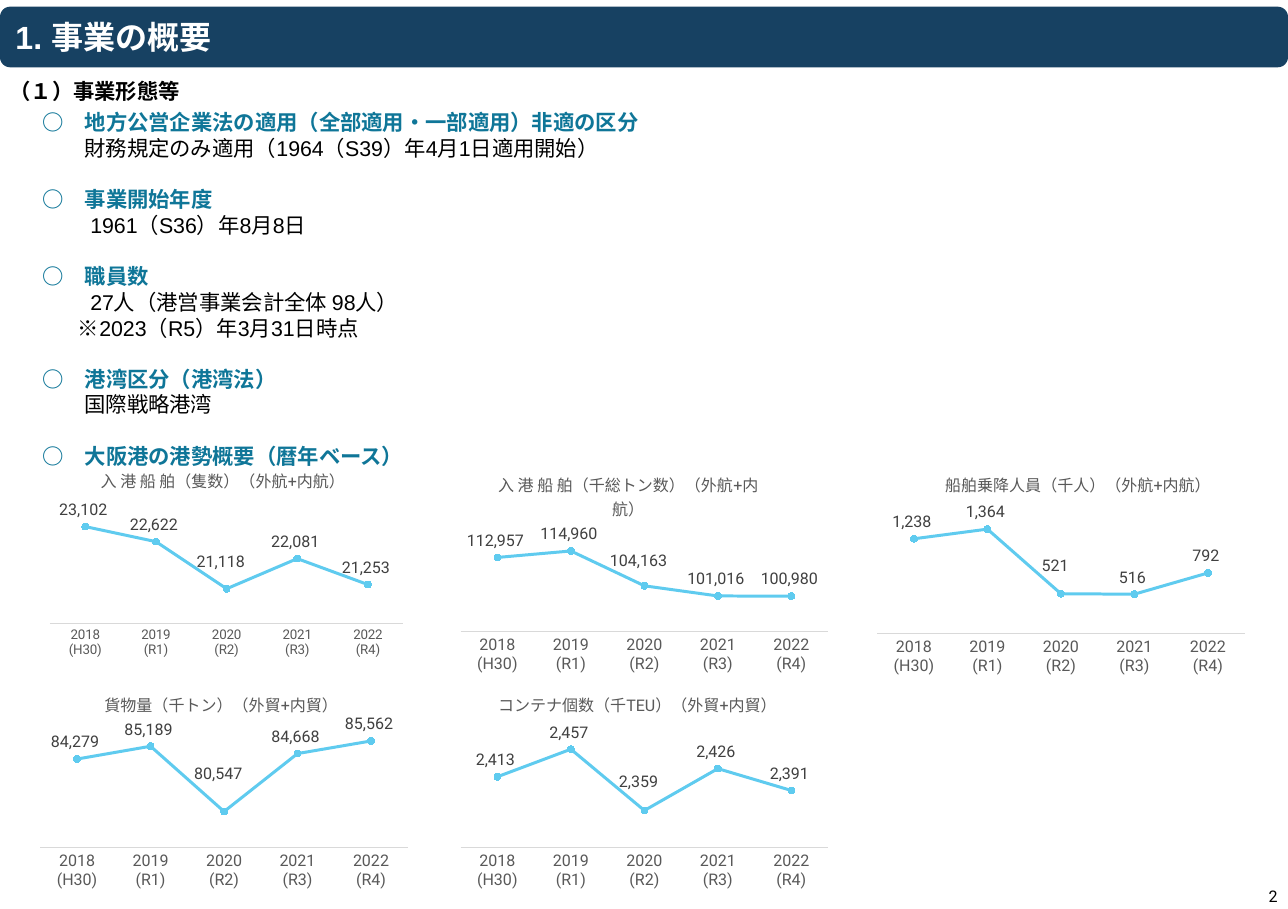
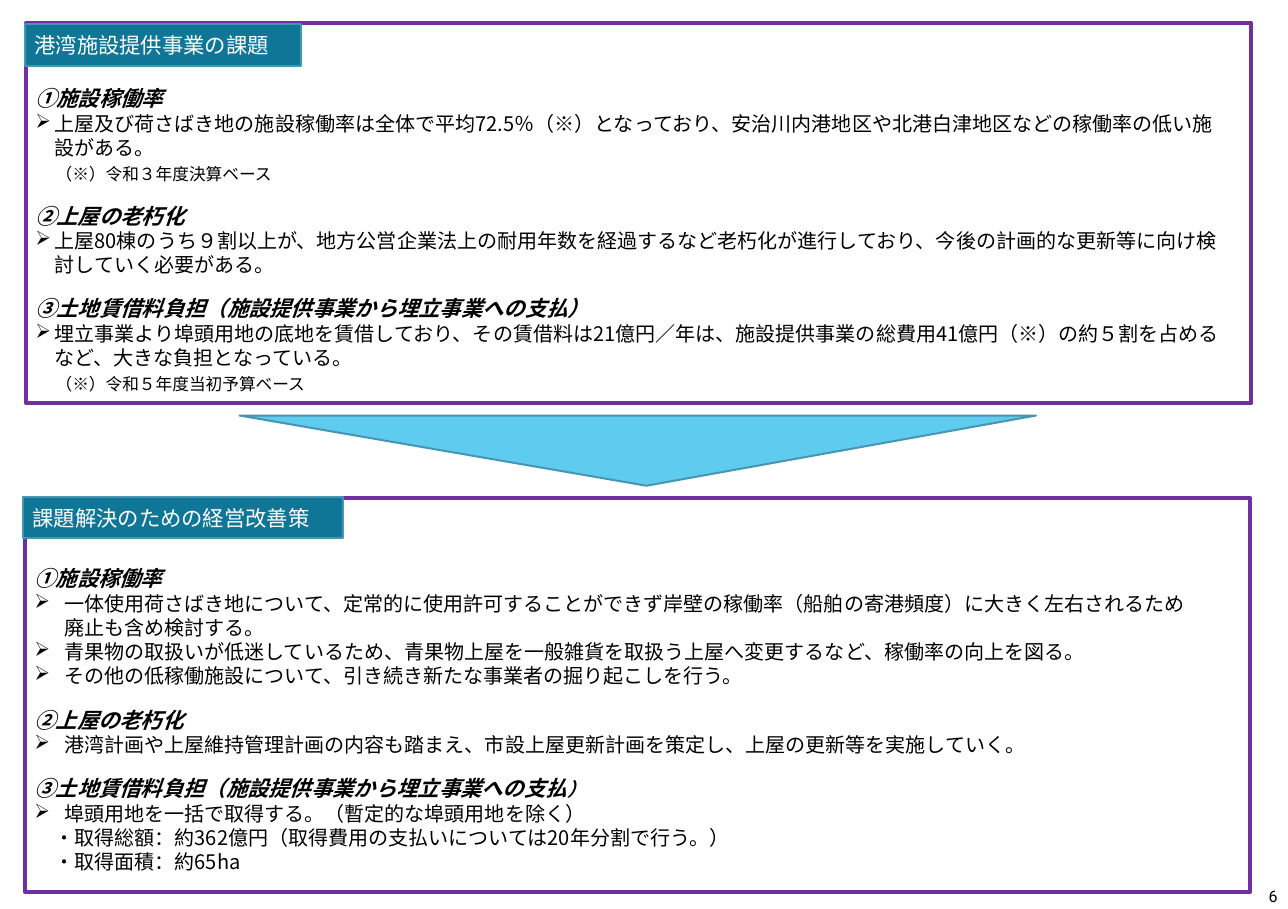
from lxml import etree
from pptx import Presentation
from pptx.chart.data import CategoryChartData
from pptx.dml.color import RGBColor
from pptx.enum.chart import XL_CHART_TYPE, XL_LABEL_POSITION, XL_MARKER_STYLE, XL_TICK_MARK
from pptx.enum.shapes import MSO_SHAPE
from pptx.enum.text import MSO_ANCHOR, PP_ALIGN
from pptx.oxml.ns import qn
from pptx.util import Inches, Pt

LINE_MARKERS = XL_CHART_TYPE.LINE_MARKERS
ABOVE = XL_LABEL_POSITION.ABOVE
CIRCLE = XL_MARKER_STYLE.CIRCLE
NO_TICK = XL_TICK_MARK.NONE
RECTANGLE, ROUNDED = MSO_SHAPE.RECTANGLE, MSO_SHAPE.ROUNDED_RECTANGLE
TOP, MIDDLE = MSO_ANCHOR.TOP, MSO_ANCHOR.MIDDLE
LEFT, RIGHT = PP_ALIGN.LEFT, PP_ALIGN.RIGHT

COLORS = {name: RGBColor.from_string(value) for name, value in {
    "navy": "174162", "teal": "0F7698", "teal_line": "4696B1", "sky": "5FCBEF",
    "purple": "7030A0", "black": "000000", "white": "FFFFFF",
    "label": "404040", "gray": "595959", "axis": "D9D9D9"}.items()}
CJK = "Noto Sans CJK JP"
NUMBER_FORMAT = r"#,##0_);[Red]\(#,##0\)"


def write(frame, text, size=16, name="Roboto", color="black", bold=False, italic=False,
          align=LEFT, before=0, indent=0, hanging=0, bullet=None):
    """Fill the first paragraph of the frame, or add one after the last."""
    para = frame.paragraphs[0] if not frame.text else frame.add_paragraph()
    para.text = text
    para.alignment = align
    para.line_spacing = Pt(size * 1.2)
    para.space_before = Pt(before)
    font = para.font
    font.name, font.size, font.bold, font.italic = name, Pt(size), bold, italic
    font.color.rgb = COLORS[color]
    properties = para._p.get_or_add_pPr()
    properties.set("marL", str(Inches(indent)))
    properties.set("indent", str(-Inches(hanging)))
    defaults = properties.find(qn("a:defRPr"))
    defaults.find(qn("a:latin")).addnext(etree.Element(qn("a:ea"), typeface=CJK))
    if bullet:
        defaults.addprevious(etree.Element(qn("a:buChar"), char=bullet))
    return para


def add_box(page, place, kind=None, fill=None, line=None, width=0, anchor=TOP):
    """Add a text box, or a preset shape when a kind is given."""
    place = [Inches(length) for length in place]
    if kind is None:
        box = page.shapes.add_textbox(*place)
    else:
        box = page.shapes.add_shape(kind, *place)
        box.shadow.inherit = False
        if fill:
            box.fill.solid()
            box.fill.fore_color.rgb = COLORS[fill]
        else:
            box.fill.background()
        if line:
            box.line.color.rgb = COLORS[line]
            box.line.width = Pt(width)
        else:
            box.line.fill.background()
    box.text_frame.word_wrap = True
    box.text_frame.vertical_anchor = anchor
    return box


deck = Presentation()
deck.slide_width, deck.slide_height = Inches(13.39), Inches(9.45)

# Pages with their numbers
pages = []
for number in ("2", "6"):
    page = deck.slides.add_slide(deck.slide_layouts[6])
    number_box = add_box(page, (12.63, 9.18, 0.75, 0.27), anchor=MIDDLE)
    write(number_box.text_frame, number, 12, align=RIGHT)
    pages.append(page)
overview, issues = pages

# Overview: title band and section heading
band = add_box(overview, (0, 0.07, 13.39, 0.63), ROUNDED, fill="navy", anchor=MIDDLE)
band.text_frame.margin_left = Inches(0.13)
write(band.text_frame, "1. 事業の概要", 24, "Arial", "white", bold=True)
section = add_box(overview, (0, 0.76, 2.29, 0.37))
write(section.text_frame, "（１）事業形態等", bold=True)

# Overview: headings, each with its indented lines
facts = [
    ("○　地方公営企業法の適用（全部適用・一部適用）非適の区分",
     [("財務規定のみ適用（1964（S39）年4月1日適用開始）", 0.44)]),
    ("○　事業開始年度", [("1961（S36）年8月8日", 0.5)]),
    ("○　職員数", [("27人（港営事業会計全体 98人）", 0.5),
                ("　※2023（R5）年3月31日時点", 0.15)]),
    ("○　港湾区分（港湾法）", [("国際戦略港湾", 0.44)]),
    ("○　大阪港の港勢概要（暦年ベース）", []),
]
facts_frame = add_box(overview, (0.34, 1.09, 12.09, 3.87)).text_frame
for index, (heading, lines) in enumerate(facts):
    write(facts_frame, heading, color="teal", bold=True, before=19.2 if index else 0)
    for text, indent in lines:
        write(facts_frame, text, name="Arial", indent=indent)

# Overview: line charts
years = ["2018\n(H30)", "2019\n(R1)", "2020\n(R2)", "2021\n(R3)", "2022\n(R4)"]
# title, left, top, height, category size, values, axis range,
# plot area (x, y, w, h), title corner, shift of the 2020 label
charts = [
    ("入 港 船 舶（隻数）（外航+内航）", 0.38, 4.8, 2.13, 10,
     (23102, 22622, 21118, 22081, 21253), (20000, 23500),
     (0.035, 0.256, 0.923, 0.536), (0.16, 0.01), (-0.01, -0.05)),
    ("入 港 船 舶（千総トン数）（外航+内\n航）", 4.71, 4.82, 2.24, 12,
     (112957, 114960, 104163, 101016, 100980), (90000, 120000),
     (0.02, 0.33, 0.96, 0.45), (0.11, 0.02), (-0.01, -0.04)),
    ("貨物量（千トン）（外貿+内貿）", 0.34, 7.15, 2.13, 12,
     (84279, 85189, 80547, 84668, 85562), (78000, 86000),
     (0.02, 0.23, 0.96, 0.55), (0.18, 0), (-0.01, -0.1)),
    ("コンテナ個数（千TEU）（外貿+内貿）", 4.71, 7.15, 2.13, 12,
     (2413, 2457, 2359, 2426, 2391), (2300, 2480),
     (0.02, 0.23, 0.96, 0.55), (0.11, 0), (-0.01, -0.06)),
    ("船舶乗降人員（千人）（外航+内航）", 9.04, 4.82, 2.24, 12,
     (1238, 1364, 521, 516, 792), (0, 1600),
     (0.02, 0.22, 0.96, 0.57), (0.19, 0.02), (-0.01, -0.05)),
]
for (title, left, top, height, category_size, values, limits,
     plot_area, title_corner, label_shift) in charts:
    data = CategoryChartData(number_format=NUMBER_FORMAT)
    data.categories = years
    data.add_series("Series 1", values)
    chart = overview.shapes.add_chart(LINE_MARKERS, Inches(left), Inches(top),
                                      Inches(3.98), Inches(height), data).chart
    chart.has_legend = False
    chart.font.name, chart.font.size = "Roboto", Pt(10)
    chart.font.color.rgb = COLORS["black"]

    chart.has_title = True
    title_frame = chart.chart_title.text_frame
    title_frame.text = title
    for para in title_frame.paragraphs:
        para.font.name, para.font.size, para.font.bold = "Roboto", Pt(12), False
        para.font.color.rgb = COLORS["gray"]

    category_axis, value_axis = chart.category_axis, chart.value_axis
    category_axis.major_tick_mark = NO_TICK
    category_axis.format.line.color.rgb = COLORS["axis"]
    category_axis.format.line.width = Pt(0.75)
    category_axis.tick_labels.font.name = "Roboto"
    category_axis.tick_labels.font.size = Pt(category_size)
    category_axis.tick_labels.font.color.rgb = COLORS["gray"]
    value_axis.minimum_scale, value_axis.maximum_scale = limits
    value_axis.has_major_gridlines = False
    value_axis.visible = False

    plot = chart.plots[0]
    plot.vary_by_categories = False
    series = plot.series[0]
    series.smooth = False
    series.format.line.color.rgb = COLORS["sky"]
    series.format.line.width = Pt(2.25)
    series.marker.style, series.marker.size = CIRCLE, 5
    series.marker.format.fill.solid()
    series.marker.format.fill.fore_color.rgb = COLORS["sky"]
    series.marker.format.line.color.rgb = COLORS["sky"]
    labels = series.data_labels
    labels.show_value = True
    labels.number_format, labels.number_format_is_linked = NUMBER_FORMAT, False
    for label in (labels, series.points[2].data_label):
        label.position = ABOVE
        label.font.name, label.font.size = "Roboto", Pt(12)
        label.font.color.rgb = COLORS["label"]

    # No leader lines; manual positions of plot area, title and 2020 label
    space = chart._chartSpace
    for leader_lines in space.iter(qn("c:showLeaderLines")):
        leader_lines.set("val", "0")
    for tag, index, mode, numbers in (("c:plotArea", 0, "edge", plot_area),
                                      ("c:title", 1, "edge", title_corner),
                                      ("c:dLbl", 1, "factor", label_shift)):
        parent = next(space.iter(qn(tag)))
        for old_layout in parent.findall(qn("c:layout")):
            parent.remove(old_layout)
        layout = etree.Element(qn("c:layout"))
        manual = etree.SubElement(layout, qn("c:manualLayout"))
        settings = [("layoutTarget", "inner")] if tag == "c:plotArea" else []
        settings += [("xMode", mode), ("yMode", mode), *zip("xywh", numbers)]
        for key, value in settings:
            etree.SubElement(manual, qn(f"c:{key}"), val=str(value))
        parent.insert(index, layout)

# Issues: two framed panels with tabs
STYLES = {
    "heading": dict(size=16, bold=True, italic=True),
    "bullet": dict(size=15, bullet="➢"),
    "detail": dict(size=15, indent=0.21),
    "note": dict(size=12.5, indent=0.21, before=3),
}
panels = [
    ("港湾施設提供事業の課題", (0.27, 0.24, 12.74, 3.95), (0.26, 0.25, 2.87, 0.44), 0.65, 0.2, [
        ("heading", "①施設稼働率"),
        ("bullet", "上屋及び荷さばき地の施設稼働率は全体で平均72.5％（※）となっており、"
                   "安治川内港地区や北港白津地区などの稼働率の低い施\v設がある。"),
        ("note", "（※）令和３年度決算ベース"),
        ("heading", "②上屋の老朽化"),
        ("bullet", "上屋80棟のうち９割以上が、地方公営企業法上の耐用年数を経過するなど"
                   "老朽化が進行しており、今後の計画的な更新等に向け検\v討していく必要がある。"),
        ("heading", "③土地賃借料負担（施設提供事業から埋立事業への支払）"),
        ("bullet", "埋立事業より埠頭用地の底地を賃借しており、その賃借料は21億円／年は、"
                   "施設提供事業の総費用41億円（※）の約５割を占める\vなど、大きな負担となっている。"),
        ("note", "（※）令和５年度当初予算ベース"),
    ]),
    ("課題解決のための経営改善策", (0.26, 5.18, 12.74, 4.09), (0.24, 5.17, 3.33, 0.42), 0.7, 0.31, [
        ("heading", "①施設稼働率"),
        ("bullet", "一体使用荷さばき地について、定常的に使用許可することができず"
                   "岸壁の稼働率（船舶の寄港頻度）に大きく左右されるため\v廃止も含め検討する。"),
        ("bullet", "青果物の取扱いが低迷しているため、青果物上屋を一般雑貨を取扱う上屋へ"
                   "変更するなど、稼働率の向上を図る。"),
        ("bullet", "その他の低稼働施設について、引き続き新たな事業者の掘り起こしを行う。"),
        ("heading", "②上屋の老朽化"),
        ("bullet", "港湾計画や上屋維持管理計画の内容も踏まえ、市設上屋更新計画を策定し、"
                   "上屋の更新等を実施していく。"),
        ("heading", "③土地賃借料負担（施設提供事業から埋立事業への支払"),
        ("bullet", "埠頭用地を一括で取得する。（暫定的な埠頭用地を除く）"),
        ("detail", "・取得総額：約362億円（取得費用の支払いについては20年分割で行う。）"),
        ("detail", "・取得面積：約65ha"),
    ]),
]
for tab_text, panel_place, tab_place, margin_top, hanging, lines in panels:
    panel = add_box(issues, panel_place, RECTANGLE, line="purple", width=3)
    frame = panel.text_frame
    frame.margin_top, frame.margin_right = Inches(margin_top), Inches(0.05)
    for index, (kind, text) in enumerate(lines):
        style = dict(STYLES[kind])
        if kind == "heading" and index:
            style["before"] = 14.4
        if kind == "bullet":
            style.update(indent=hanging, hanging=hanging)
        para = write(frame, text, name=CJK, **style)
        if text.endswith("支払"):
            span = para.add_run()
            span.text, span.font.size = "）", Pt(14)
    tab = add_box(issues, tab_place, RECTANGLE, "teal", "teal_line", 1.5, MIDDLE)
    write(tab.text_frame, tab_text, color="white")

# Issues: triangle leading from the issues to the measures
outline = issues.shapes.build_freeform(Inches(2.49), Inches(4.32))
outline.add_line_segments([(Inches(10.77), Inches(4.32)), (Inches(6.72), Inches(5.05))])
triangle = outline.convert_to_shape()
triangle.shadow.inherit = False
triangle.fill.solid()
triangle.fill.fore_color.rgb = COLORS["sky"]
triangle.line.color.rgb = COLORS["teal_line"]
triangle.line.width = Pt(1.5)

deck.save("out.pptx")
